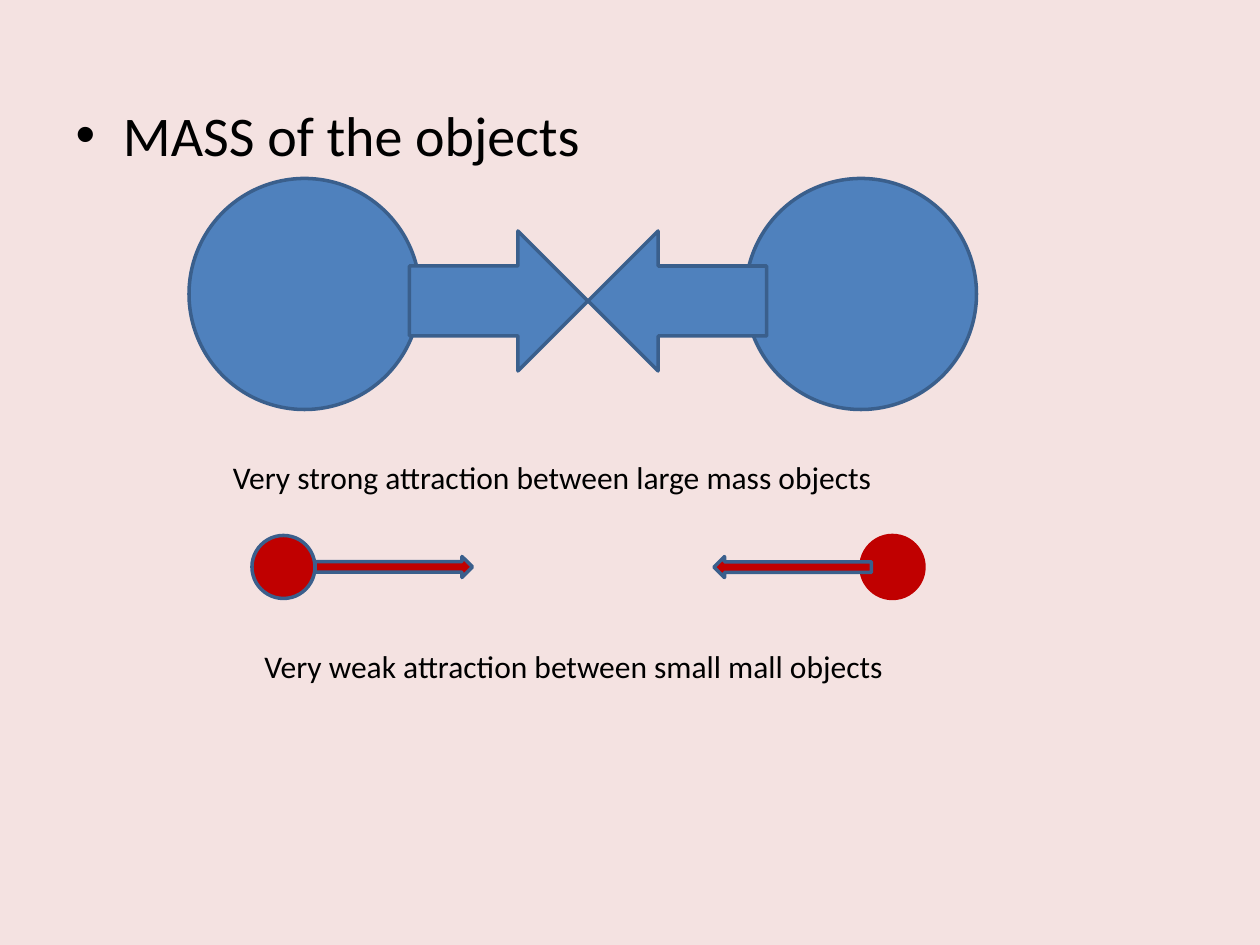
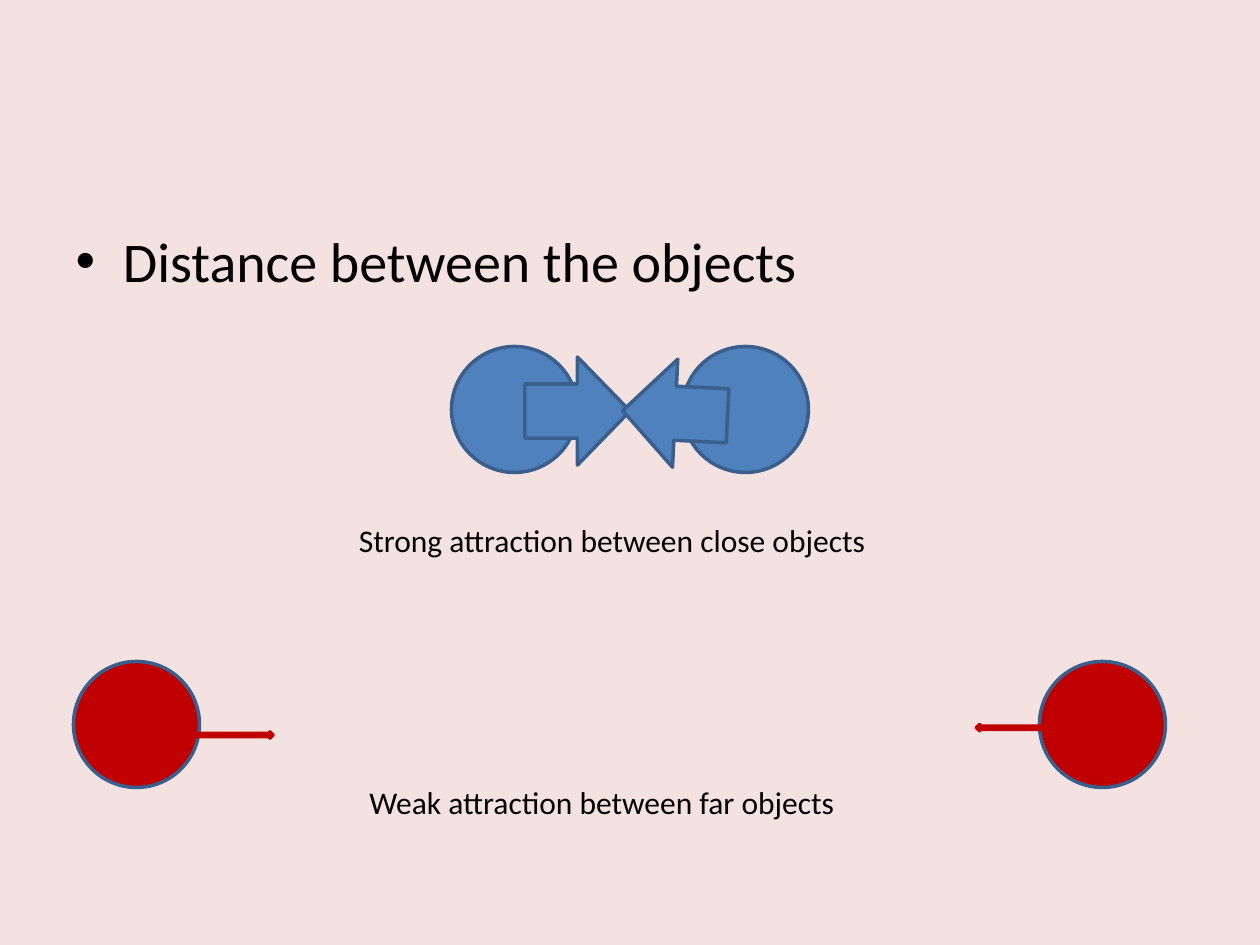
from dataclasses import dataclass

from pptx import Presentation
from pptx.dml.color import RGBColor
from pptx.enum.shapes import MSO_SHAPE
from pptx.enum.text import MSO_AUTO_SIZE, PP_ALIGN
from pptx.util import Emu, Inches, Pt

CIRCLE = MSO_SHAPE.OVAL
ARROW = MSO_SHAPE.RIGHT_ARROW
LEFT = PP_ALIGN.LEFT
FIT_SHAPE = MSO_AUTO_SIZE.SHAPE_TO_FIT_TEXT
TITLE_AND_CONTENT = 1
LEFTWARD = 180
CELL = Inches(1) // 12


@dataclass(frozen=True)
class Theme:
    background: str = "F4E2E1"
    blue: str = "4F81BD"
    outline: str = "3A5F8C"
    red: str = "C00000"
    text: str = "000000"
    font: str = "Calibri"
    heading_size: int = 32
    caption_size: int = 18
    line_width: int = 2


THEME = Theme()


@dataclass(frozen=True)
class Box:
    column: float
    row: float
    columns: float
    rows: float

    def lengths(self) -> tuple[Emu, Emu, Emu, Emu]:
        cells = (self.column, self.row, self.columns, self.rows)
        return tuple(Emu(round(cell * CELL)) for cell in cells)


@dataclass(frozen=True)
class Figure:
    kind: MSO_SHAPE
    box: Box
    fill: str
    line: str = THEME.outline
    rotation: float = 0


@dataclass(frozen=True)
class Caption:
    text: str
    box: Box


@dataclass(frozen=True)
class FactorSlide:
    heading: str
    heading_row: float
    figures: list[Figure]
    captions: list[Caption]


def circles(columns: tuple[float, float], row: float, size: float, fill: str,
            lines: tuple[str, str] = (THEME.outline, THEME.outline)) -> list[Figure]:
    return [Figure(CIRCLE, Box(column, row, size, size), fill, line)
            for column, line in zip(columns, lines)]


def arrows(right: Box, left: Box, fill: str, line: str = THEME.outline,
           left_rotation: float = LEFTWARD) -> list[Figure]:
    return [Figure(ARROW, right, fill, line),
            Figure(ARROW, left, fill, line, left_rotation)]


FACTORS = [
    FactorSlide(
        "MASS of the objects", 9,
        circles((18, 71), 17, 22, THEME.blue)
        + circles((24, 82), 51, 6, THEME.red, (THEME.outline, THEME.red))
        + arrows(Box(39, 22, 17, 13.33), Box(56, 22, 17, 13.33), THEME.blue)
        + arrows(Box(30, 53, 15, 2), Box(68, 53, 15, 2), THEME.red),
        [Caption("Very strong attraction between large mass objects", Box(21, 43, 64, 4.8)),
         Caption("Very weak attraction between small mall objects", Box(24, 61, 62, 4.8))],
    ),
    FactorSlide(
        "Distance between the objects", 21,
        circles((43, 65), 33, 12, THEME.blue)
        + circles((7, 99), 63, 12, THEME.red)
        + arrows(Box(50, 34, 10, 10.3), Box(59.3, 34.2, 10, 10.3), THEME.blue,
                 left_rotation=182.8)
        + arrows(Box(18, 69.7, 8, 0.6), Box(93, 69, 9, 0.6), THEME.red, THEME.red),
        [Caption("Strong attraction between close objects", Box(33, 49, 51.2, 4.8)),
         Caption("Weak attraction between far objects", Box(34, 74, 47.3, 4.8))],
    ),
]


def place(shape, box: Box) -> None:
    shape.left, shape.top, shape.width, shape.height = box.lengths()


def write_text(frame, text: str, *, size: int, color: str = THEME.text,
               font: str = THEME.font, alignment: PP_ALIGN = LEFT) -> None:
    paragraph = frame.paragraphs[0]
    paragraph.alignment = alignment
    run = paragraph.add_run()
    run.text = text
    run.font.size = Pt(size)
    run.font.name = font
    run.font.color.rgb = RGBColor.from_string(color)


def draw_figure(slide, figure: Figure) -> None:
    shape = slide.shapes.add_shape(figure.kind, *figure.box.lengths())
    shape.shadow.inherit = False
    shape.rotation = figure.rotation
    shape.fill.solid()
    shape.fill.fore_color.rgb = RGBColor.from_string(figure.fill)
    shape.line.color.rgb = RGBColor.from_string(figure.line)
    shape.line.width = Pt(THEME.line_width)


def draw_caption(slide, caption: Caption) -> None:
    shape = slide.shapes.add_textbox(*caption.box.lengths())
    shape.text_frame.word_wrap = False
    shape.text_frame.auto_size = FIT_SHAPE
    write_text(shape.text_frame, caption.text, size=THEME.caption_size)


def build_slide(presentation, factor: FactorSlide) -> None:
    slide = presentation.slides.add_slide(presentation.slide_layouts[TITLE_AND_CONTENT])
    title = slide.shapes.title.element
    title.getparent().remove(title)
    body = slide.placeholders[1]
    place(body, Box(6, factor.heading_row, 108, 59.4))
    write_text(body.text_frame, factor.heading, size=THEME.heading_size)
    for figure in factor.figures:
        draw_figure(slide, figure)
    for caption in factor.captions:
        draw_caption(slide, caption)


def main() -> None:
    presentation = Presentation()
    presentation.slide_width = Inches(10)
    presentation.slide_height = Inches(7.5)
    background = presentation.slide_master.background.fill
    background.solid()
    background.fore_color.rgb = RGBColor.from_string(THEME.background)
    for factor in FACTORS:
        build_slide(presentation, factor)
    presentation.save("out.pptx")


if __name__ == "__main__":
    main()
